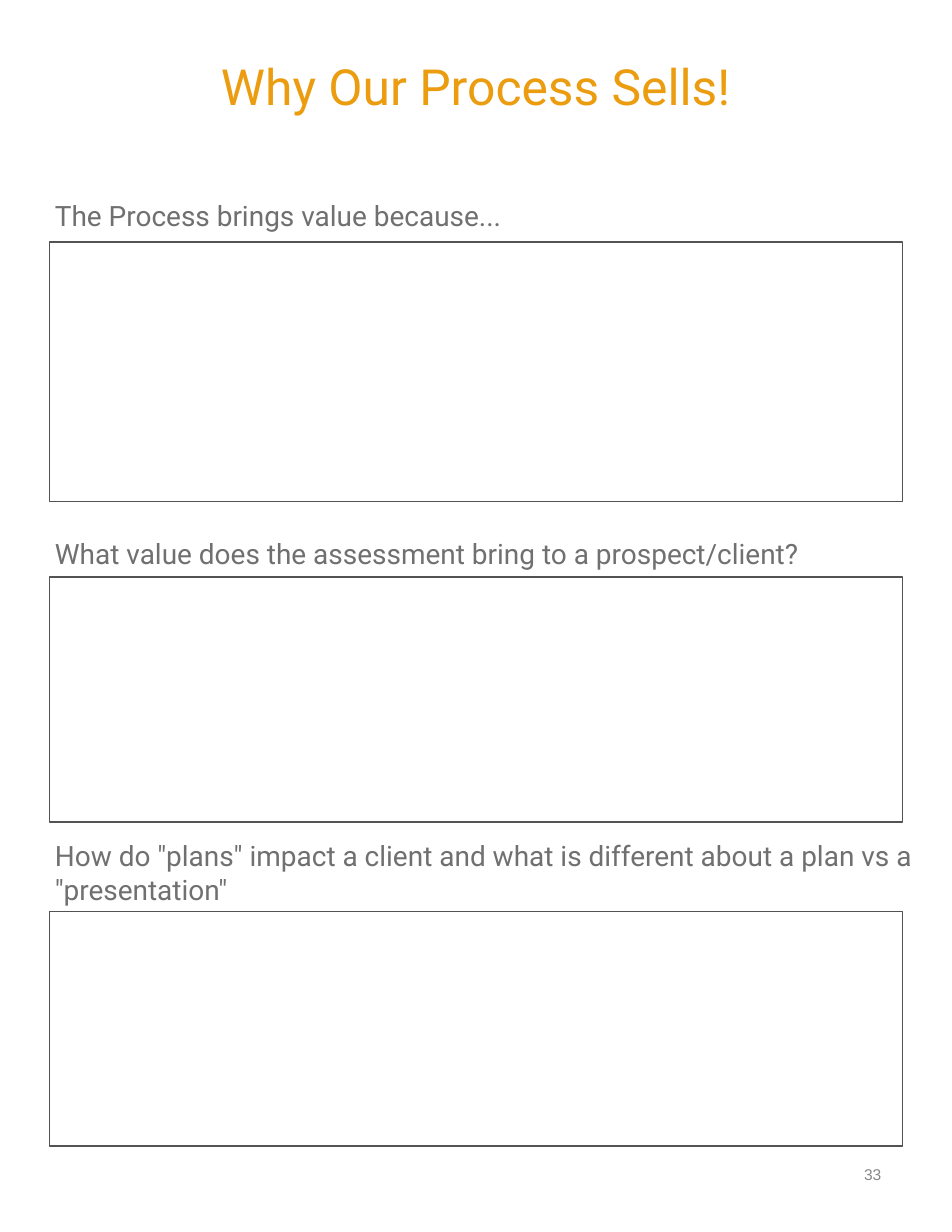
from dataclasses import dataclass

from pptx import Presentation
from pptx.dml.color import RGBColor
from pptx.enum import shapes, text
from pptx.util import Pt


@dataclass(frozen=True)
class Theme:
    title_color: RGBColor = RGBColor(0xEB, 0x9C, 0x0F)
    question_color: RGBColor = RGBColor(0x70, 0x70, 0x70)
    number_color: RGBColor = RGBColor(0x88, 0x88, 0x88)
    border_color: RGBColor = RGBColor(0x53, 0x53, 0x53)
    title_size: int = 32
    question_size: int = 18
    number_size: int = 10
    body_font: str = "Roboto"
    number_font: str = "Arial"


theme = Theme()
LEFT = 31.7
WIDTH = 548.6
QUESTION_WIDTH = 560.9

# Page
deck = Presentation()
deck.slide_width, deck.slide_height = Pt(612), Pt(792)
page = deck.slides.add_slide(deck.slide_layouts[6])


def add_text(wording, left, top, width, height, size, color,
             font=theme.body_font, align=text.PP_ALIGN.LEFT,
             anchor=text.MSO_ANCHOR.TOP, wrap=True):
    box = page.shapes.add_textbox(Pt(left), Pt(top), Pt(width), Pt(height))
    frame = box.text_frame
    frame.text = wording
    frame.word_wrap = wrap
    frame.auto_size = text.MSO_AUTO_SIZE.SHAPE_TO_FIT_TEXT
    frame.vertical_anchor = anchor
    frame.margin_left = frame.margin_right = Pt(3.6)
    frame.margin_top = frame.margin_bottom = Pt(3.6)
    para = frame.paragraphs[0]
    para.alignment = align
    span = para.runs[0]
    span.font.name = font
    span.font.size = Pt(size)
    span.font.color.rgb = color
    return para


# Page number
add_text("33", 550.8, 745.9, 19.4, 18, theme.number_size, theme.number_color,
         font=theme.number_font, align=text.PP_ALIGN.RIGHT,
         anchor=text.MSO_ANCHOR.MIDDLE, wrap=False)

# Title
title = add_text("Why Our Process Sells!", LEFT, 34.6, WIDTH, 45.4,
                 theme.title_size, theme.title_color,
                 align=text.PP_ALIGN.CENTER, anchor=text.MSO_ANCHOR.MIDDLE)
title.line_spacing = 0.9

# Questions: wording, top, height, answer top, answer height
questions = [
    ("The Process brings value because...", 123.8, 28.8, 155.5, 167),
    ("What value does the assessment bring to a prospect/client?",
     341.3, 28.8, 370.8, 157.7),
    ('How do "plans" impact a client and what is different about a plan vs a '
     '"presentation"', 535.7, 51.1, 586.1, 150.5),
]

for wording, top, height, answer_top, answer_height in questions:
    # Empty answer frame
    answer = page.shapes.add_shape(shapes.MSO_SHAPE.RECTANGLE, Pt(LEFT),
                                   Pt(answer_top), Pt(WIDTH), Pt(answer_height))
    answer.shadow.inherit = False
    answer.fill.background()
    answer.line.color.rgb = theme.border_color
    answer.line.width = Pt(1)

    # Question above the frame
    add_text(wording, LEFT, top, QUESTION_WIDTH, height,
             theme.question_size, theme.question_color)

deck.save("out.pptx")
